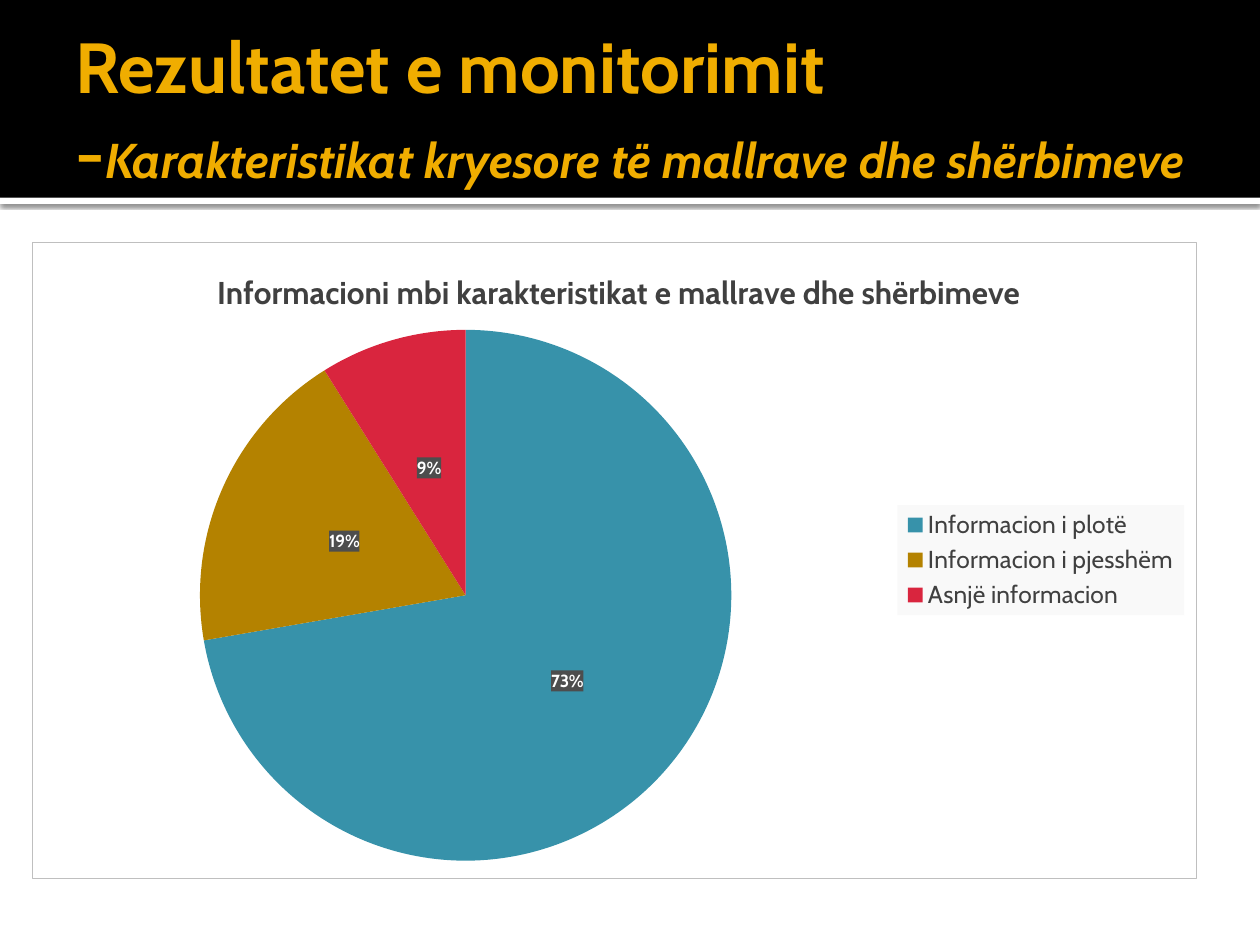
from pptx import Presentation
from pptx.chart.data import CategoryChartData
from pptx.dml.color import RGBColor
from pptx.enum.chart import XL_CHART_TYPE, XL_LABEL_POSITION, XL_LEGEND_POSITION
from pptx.enum.shapes import MSO_SHAPE
from pptx.enum.text import MSO_ANCHOR
from pptx.oxml import parse_xml
from pptx.oxml.ns import nsdecls, qn
from pptx.util import Pt

FONT = "Cabin"
BLACK = RGBColor(0, 0, 0)
WHITE = RGBColor(0xFF, 0xFF, 0xFF)
GOLD = RGBColor(0xF0, 0xAD, 0x00)
DARK_GREY = RGBColor(0x40, 0x40, 0x40)
LABEL_GREY = RGBColor(0x4D, 0x4D, 0x4D)
LEGEND_GREY = RGBColor(0xF9, 0xF9, 0xF9)
BORDER_GREY = RGBColor(0xBF, 0xBF, 0xBF)

# Content
HEADING = "Rezultatet e monitorimit"
SUBHEADING = "Karakteristikat kryesore të mallrave dhe shërbimeve"
CHART_TITLE = "Informacioni mbi karakteristikat e mallrave dhe shërbimeve"
SLICES = [
    ("Informacion i plotë", 73, RGBColor(0x37, 0x92, 0xAA)),
    ("Informacion i pjesshëm", 19, RGBColor(0xB4, 0x82, 0x00)),
    ("Asnjë informacion", 9, RGBColor(0xD9, 0x25, 0x3E)),
]

# Sizes in points; chart parts are measured from the chart's corner
BANNER_HEIGHT = 113
CHART_WIDTH, CHART_HEIGHT = 666, 364.32
TITLE_AT = (102.5, 13)
LEGEND_AT = (495, 150.3, 164, 63)
PIE_AT = (96, 50, 304, 304)


def style_font(font, size, color, bold=False, italic=False):
    font.name, font.size = FONT, Pt(size)
    font.bold, font.italic = bold, italic
    font.color.rgb = color


def add_band(page, top, height, color):
    band = page.shapes.add_shape(MSO_SHAPE.RECTANGLE, 0, Pt(top), Pt(720), Pt(height))
    band.shadow.inherit = False
    band.fill.solid()
    band.fill.fore_color.rgb = color
    band.line.fill.background()
    return band


def fill_xml(fill, border=None):
    line = f'<a:solidFill><a:srgbClr val="{border}"/></a:solidFill>' if border else "<a:noFill/>"
    return parse_xml(
        f'<c:spPr {nsdecls("c", "a")}><a:solidFill><a:srgbClr val="{fill}"/></a:solidFill>'
        f'<a:ln w="{Pt(0.75)}">{line}</a:ln></c:spPr>')


def place(element, spot, before, inner=False):
    """Give a chart part a manual layout, as fractions of the chart."""
    for old in element.findall(qn("c:layout")):
        element.remove(old)
    fields = [("layoutTarget", "inner")] if inner else []
    fields += [("xMode", "edge"), ("yMode", "edge")]
    sides = (CHART_WIDTH, CHART_HEIGHT) * 2
    fields += [(name, length / side) for name, length, side in zip("xywh", spot, sides)]
    body = "".join(f'<c:{name} val="{value}"/>' for name, value in fields)
    element.find(qn(before)).addprevious(parse_xml(
        f'<c:layout {nsdecls("c")}><c:manualLayout>{body}</c:manualLayout></c:layout>'))


def add_pie(page):
    data = CategoryChartData()
    data.categories = [name for name, _, _ in SLICES]
    data.add_series("Series 1", [value for _, value, _ in SLICES])
    chart = page.shapes.add_chart(XL_CHART_TYPE.PIE, Pt(18), Pt(138.24),
                                  Pt(CHART_WIDTH), Pt(CHART_HEIGHT), data).chart
    style_font(chart.font, 10, BLACK)
    space = chart._chartSpace
    space.find(qn("c:txPr")).addprevious(fill_xml(WHITE, BORDER_GREY))

    # Chart title
    chart.has_title = True
    span = chart.chart_title.text_frame.paragraphs[0].add_run()
    span.text = CHART_TITLE
    style_font(span.font, 18, DARK_GREY, bold=True)
    place(space.chart.find(qn("c:title")), TITLE_AT, "c:overlay")

    # Legend
    chart.has_legend = True
    legend = chart.legend
    legend.position = XL_LEGEND_POSITION.RIGHT
    legend.include_in_layout = False
    style_font(legend.font, 14, DARK_GREY)
    legend_element = space.chart.find(qn("c:legend"))
    place(legend_element, LEGEND_AT, "c:overlay")
    legend_element.find(qn("c:txPr")).addprevious(fill_xml(LEGEND_GREY))

    # Slices and percentages
    plot = chart.plots[0]
    plot.vary_by_categories = True
    series = plot.series[0]
    for index, (_, _, color) in enumerate(SLICES):
        fill = series.points[index].format.fill
        fill.solid()
        fill.fore_color.rgb = color
    labels = series.data_labels
    labels.show_percentage, labels.show_value = False, True
    labels.number_format, labels.number_format_is_linked = '0"%"', False
    labels.position = XL_LABEL_POSITION.CENTER
    style_font(labels.font, 10, WHITE, bold=True)
    label_element = series._element.find(qn("c:dLbls"))
    label_element.find(qn("c:txPr")).addprevious(fill_xml(LABEL_GREY))
    place(space.chart.plotArea, PIE_AT, "c:pieChart", inner=True)


def main():
    deck = Presentation()
    deck.slide_width, deck.slide_height = Pt(720), Pt(540)
    page = deck.slides.add_slide(deck.slide_layouts[6])

    # Banner with a shadowed white strip below it
    strip = add_band(page, BANNER_HEIGHT, 3.6, WHITE)
    effects = strip._element.spPr.find(qn("a:effectLst"))
    effects.append(parse_xml(
        f'<a:outerShdw {nsdecls("a")} blurRad="{Pt(2.5)}" dist="{Pt(0.8)}" dir="5400000" '
        'rotWithShape="0"><a:srgbClr val="000000"><a:alpha val="60000"/></a:srgbClr>'
        '</a:outerShdw>'))
    add_band(page, 0, BANNER_HEIGHT, BLACK)

    # Heading
    frame = page.shapes.add_textbox(Pt(36), Pt(12.24), Pt(648), Pt(98.64)).text_frame
    frame.word_wrap = True
    frame.vertical_anchor = MSO_ANCHOR.MIDDLE
    frame.margin_left = Pt(7.2)
    frame.margin_right = frame.margin_top = frame.margin_bottom = Pt(3.6)
    para = frame.paragraphs[0]
    for text, size, italic in [(HEADING, 40.5, False), ("-", 40.5, False),
                               (SUBHEADING, 27.9, True)]:
        span = para.add_run()
        span.text = text
        style_font(span.font, size, GOLD, bold=True, italic=italic)
        if text == HEADING:
            para.add_line_break()

    add_pie(page)
    deck.save("out.pptx")


if __name__ == "__main__":
    main()
